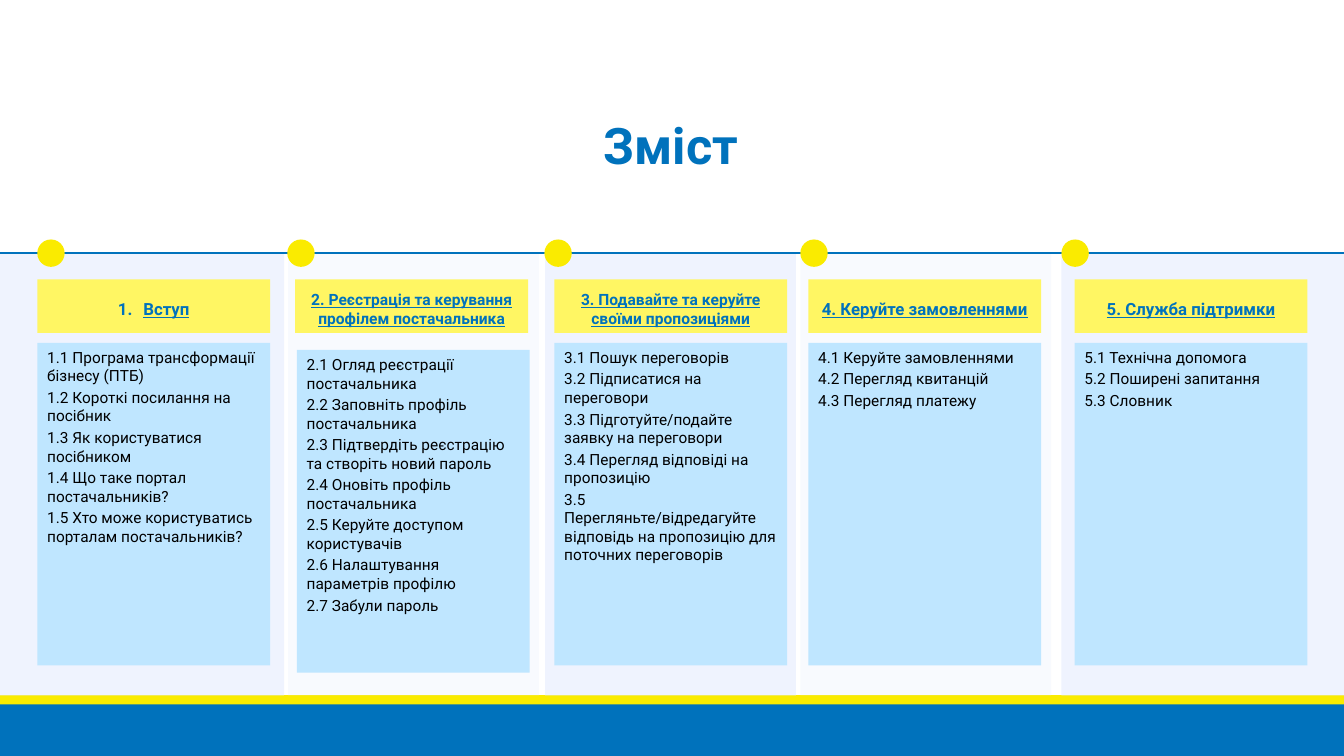
from lxml.etree import SubElement
from pptx import Presentation
from pptx.dml.color import RGBColor
from pptx.enum.shapes import MSO_CONNECTOR, MSO_SHAPE
from pptx.enum.text import MSO_ANCHOR, PP_ALIGN
from pptx.oxml.ns import qn
from pptx.util import Cm, Pt

COLORS = {"blue": "0072BC", "yellow": "FAEB00", "heading": "FFF663",
          "list": "BFE6FF", "pane": "E0E9FE", "text": "000000"}
WIDTH, HEIGHT = 33.87, 19.05
TIMELINE_Y, PANE_HEIGHT = 6.38, 11.15
DOT, CARD_WIDTH = 0.69, 5.87
HEADING_TOP, HEADING_HEIGHT, LIST_HEIGHT = 7.04, 1.35, 8.13

# pane left, pane width, pane opacity %, dot left
PANES = [(0, 7.16, 50, 0.94), (7.26, 6.32, 20, 7.24), (13.74, 6.32, 50, 13.72),
         (20.17, 6.32, 20, 20.17), (26.75, 7.12, 50, 26.75)]

# heading, heading size, heading left, list left, list top, entries
SECTIONS = [
    ("Вступ", 12, 0.94, 0.94, 8.64, [
        "1.1 Програма трансформації бізнесу (ПТБ)",
        "1.2 Короткі посилання на посібник",
        "1.3 Як користуватися посібником",
        "1.4 Що таке портал постачальників?",
        "1.5 Хто може користуватись порталам постачальників?"]),
    ("2. Реєстрація та керування профілем постачальника", 11.1, 7.44, 7.48, 8.82, [
        "2.1 Огляд реєстрації постачальника",
        "2.2 Заповніть профіль постачальника",
        "2.3 Підтвердіть реєстрацію та створіть новий пароль",
        "2.4 Оновіть профіль постачальника",
        "2.5 Керуйте доступом користувачів",
        "2.6 Налаштування параметрів профілю",
        "2.7 Забули пароль"]),
    ("3. Подавайте та керуйте своїми пропозиціями", 11.1, 13.97, 13.97, 8.64, [
        "3.1 Пошук переговорів",
        "3.2 Підписатися на переговори",
        "3.3 Підготуйте/подайте заявку на переговори",
        "3.4 Перегляд відповіді на пропозицію",
        "3.5 Перегляньте/відредагуйте відповідь на пропозицію для поточних переговорів"]),
    ("4. Керуйте замовленнями", 12, 20.37, 20.37, 8.64, [
        "4.1 Керуйте замовленнями",
        "4.2 Перегляд квитанцій",
        "4.3 Перегляд платежу"]),
    ("5. Служба підтримки", 12, 27.08, 27.08, 8.64, [
        "5.1 Технічна допомога",
        "5.2 Поширені запитання",
        "5.3 Словник"]),
]


def rgb(name):
    return RGBColor.from_string(COLORS[name])


class ContentsSlide:
    font_name = "Roboto"

    def __init__(self, presentation):
        self.slide = presentation.slides.add_slide(presentation.slide_layouts[5])
        self.shapes = self.slide.shapes

    def style(self, paragraph, size, color, bold=False, underline=None):
        font = paragraph.font
        font.name, font.size, font.bold = self.font_name, Pt(size), bold
        font.underline = underline
        font.color.rgb = rgb(color)

    def title(self, text, left, top, width, height):
        title = self.shapes.title
        title.left, title.top = Cm(left), Cm(top)
        title.width, title.height = Cm(width), Cm(height)
        frame = title.text_frame
        frame.text, frame.word_wrap = text, True
        frame.vertical_anchor = MSO_ANCHOR.BOTTOM
        frame.margin_left = frame.margin_right = 0
        frame.margin_top = frame.margin_bottom = 0
        heading = frame.paragraphs[0]
        heading.alignment, heading.line_spacing = PP_ALIGN.CENTER, 0.9
        self.style(heading, 36, "blue", bold=True)

    def block(self, left, top, width, height, color, opacity=100,
              kind=MSO_SHAPE.RECTANGLE):
        block = self.shapes.add_shape(kind, Cm(left), Cm(top), Cm(width), Cm(height))
        block.shadow.inherit = False
        block.line.fill.background()
        block.fill.solid()
        block.fill.fore_color.rgb = rgb(color)
        if opacity < 100:
            tint = block.fill._xPr.find(qn("a:solidFill"))[0]
            SubElement(tint, qn("a:alpha"), val=str(opacity * 1000))
        return block

    def line(self, y):
        line = self.shapes.add_connector(MSO_CONNECTOR.STRAIGHT,
                                         0, Cm(y), Cm(WIDTH), Cm(y))
        line.line.color.rgb, line.line.width = rgb("blue"), Pt(1.5)
        SubElement(line._element.spPr, qn("a:effectLst"))

    def card(self, left, top, height, color, anchor):
        frame = self.block(left, top, CARD_WIDTH, height, color).text_frame
        frame.word_wrap, frame.vertical_anchor = True, anchor
        frame.margin_left = frame.margin_right = Cm(0.25)
        frame.margin_top, frame.margin_bottom = Cm(0.13), 0
        return frame

    def heading(self, text, size, left, numbered):
        frame = self.card(left, HEADING_TOP, HEADING_HEIGHT, "heading",
                          MSO_ANCHOR.MIDDLE)
        frame.text = text
        paragraph = frame.paragraphs[0]
        paragraph.alignment = PP_ALIGN.CENTER
        if numbered:
            self.number(paragraph)
        self.style(paragraph, size, "blue", bold=True, underline=True)

    def number(self, paragraph):
        properties = paragraph._p.get_or_add_pPr()
        properties.set("marL", str(Cm(0.64)))
        properties.set("indent", str(-Cm(0.64)))
        color = SubElement(properties, qn("a:buClr"))
        SubElement(color, qn("a:srgbClr"), val=COLORS["blue"])
        SubElement(properties, qn("a:buAutoNum"), type="arabicPeriod")

    def entries(self, lines, left, top):
        frame = self.card(left, top, LIST_HEIGHT, "list", MSO_ANCHOR.TOP)
        frame.text = "\n".join(lines)
        for index, paragraph in enumerate(frame.paragraphs):
            paragraph.alignment = PP_ALIGN.LEFT
            paragraph.space_before = Pt(2.2 if index else 0)
            self.style(paragraph, 11, "text")


def main():
    presentation = Presentation()
    presentation.slide_width, presentation.slide_height = Cm(WIDTH), Cm(HEIGHT)
    contents = ContentsSlide(presentation)

    # Footer bands
    contents.block(0, 17.7, WIDTH, 1.35, "blue")
    contents.block(0, 17.52, WIDTH, 0.23, "yellow")

    # Column panes, then the timeline with its dots
    for left, width, opacity, _ in PANES:
        contents.block(left, TIMELINE_Y, width, PANE_HEIGHT, "pane", opacity)
    contents.line(TIMELINE_Y)
    for *_, dot_left in PANES:
        contents.block(dot_left, TIMELINE_Y - DOT / 2, DOT, DOT, "yellow",
                       kind=MSO_SHAPE.OVAL)

    # Title and the contents of each section
    contents.title("Зміст", 0.69, 2.31, 32.44, 2.11)
    for index, (name, size, left, list_left, list_top, lines) in enumerate(SECTIONS):
        contents.entries(lines, list_left, list_top)
        contents.heading(name, size, left, numbered=index == 0)

    presentation.save("out.pptx")


if __name__ == "__main__":
    main()
